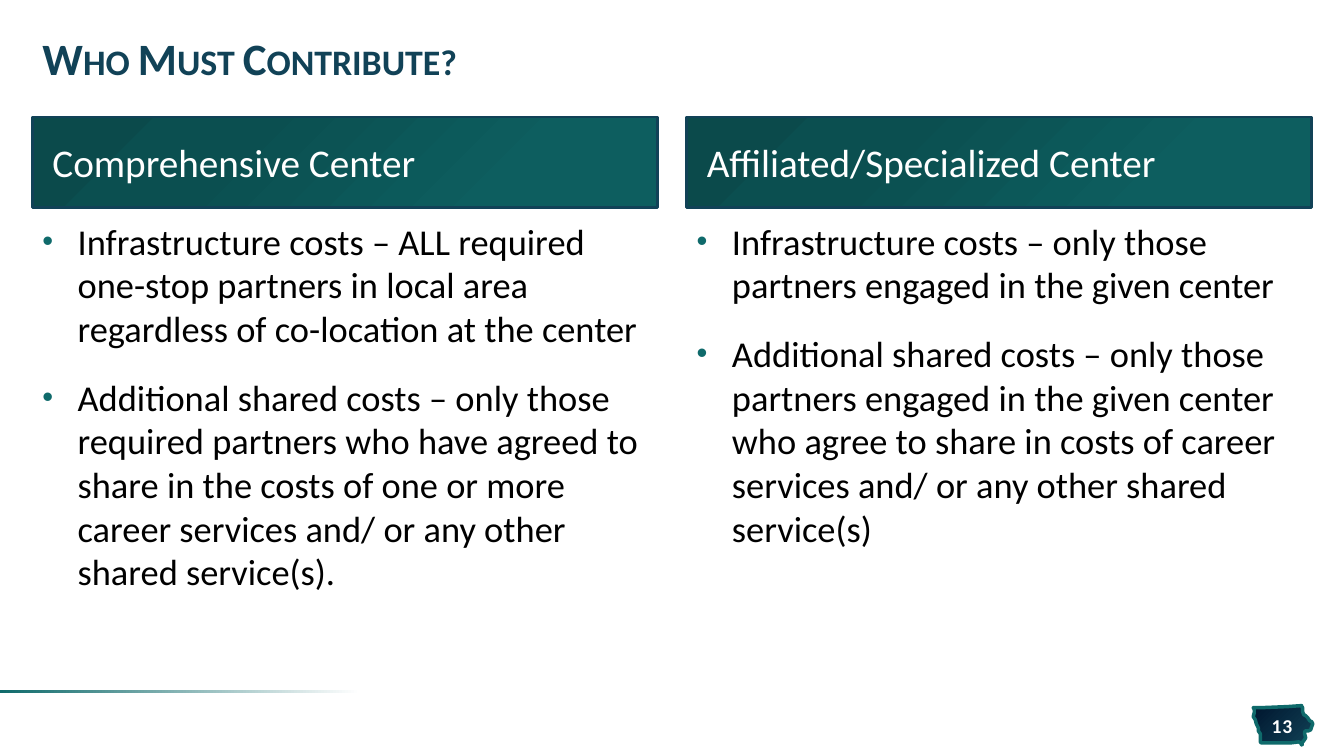
from dataclasses import dataclass

from lxml import etree
from pptx import Presentation
from pptx.dml.color import RGBColor
from pptx.enum.shapes import MSO_SHAPE as Shape
from pptx.enum.text import MSO_ANCHOR as Anchor, MSO_AUTO_SIZE as AutoSize, PP_ALIGN as Align
from pptx.oxml import parse_xml
from pptx.oxml.ns import nsdecls, qn
from pptx.util import Inches, Pt


@dataclass(frozen=True)
class Theme:
    font: str = "Calibri"
    navy: str = "114257"
    teal: str = "0F6A6B"
    white: str = "FFFFFF"
    black: str = "000000"
    badge_stops: tuple = ((0, "00162E"), (100, "114257"))
    rule_stops: tuple = ((6, "FFFFFF"), (100, "0F6A6B"))
    header_stops: tuple = ((0, "0D5E5F"), (23, "0D5E5F"), (69, "0B4F50"), (97, "0B4A4B"))
    title_size: int = 32
    header_size: int = 28
    body_size: int = 26
    number_size: int = 14


LINEAR = '<a:lin ang="{}" scaled="0"/>'
FROM_BOTTOM_RIGHT = '<a:path path="circle"><a:fillToRect l="100000" t="100000"/></a:path>'

MARGIN, COLUMN_STEP, COLUMN_WIDTH = 0.32, 6.49, 6.2

COLUMNS = [
    ("Comprehensive Center", [
        "Infrastructure costs – ALL required one-stop partners in local area "
        "regardless of co-location at the center",
        "Additional shared costs – only those required partners who have agreed to "
        "share in the costs of one or more career services and/ or any other "
        "shared service(s).",
    ]),
    ("Affiliated/Specialized Center", [
        "Infrastructure costs – only those partners engaged in the given center",
        "Additional shared costs – only those partners engaged in the given center "
        "who agree to share in costs of career services and/ or any other shared "
        "service(s)",
    ]),
]

# State outline, in hundredths of an inch
STATE_OUTLINE = [
    (1291, 700), (1277, 701), (1253, 702), (1243, 702), (1244, 704), (1244, 707),
    (1243, 711), (1245, 714), (1246, 718), (1248, 722), (1248, 725), (1250, 728),
    (1250, 732), (1250, 736), (1251, 737), (1280, 737), (1288, 736), (1290, 737),
    (1291, 739), (1292, 738), (1291, 737), (1293, 735), (1295, 732), (1294, 728),
    (1294, 726), (1295, 725), (1298, 725), (1300, 724), (1301, 721), (1302, 718),
    (1301, 716), (1299, 715), (1297, 712), (1295, 710), (1293, 709), (1292, 706),
    (1292, 702), (1291, 701),
]


class SlideBuilder:
    def __init__(self, prs, theme):
        self.theme = theme
        self.s = prs.slides.add_slide(prs.slide_layouts.get_by_name("Comparison"))

    def place(self, sp, left, top, width, height):
        sp.left, sp.top = Inches(left), Inches(top)
        sp.width, sp.height = Inches(width), Inches(height)

    def gradient(self, sp, stops, direction):
        sp.fill.background()
        gs = "".join(f'<a:gs pos="{pos * 1000}"><a:srgbClr val="{color}"/></a:gs>'
                     for pos, color in stops)
        sp_pr = sp._element.spPr
        sp_pr.replace(sp_pr.find(qn("a:noFill")), parse_xml(
            f'<a:gradFill {nsdecls("a")} rotWithShape="1"><a:gsLst>{gs}</a:gsLst>'
            f'{direction}</a:gradFill>'))

    def outline(self, sp, color, width):
        sp.line.color.rgb = RGBColor.from_string(color)
        sp.line.width = Pt(width)

    def frame(self, sp, anchor, insets=(0.1, 0.05, 0.1, 0.05)):
        tf = sp.text_frame
        tf.word_wrap = True
        tf.auto_size = AutoSize.NONE
        tf.vertical_anchor = anchor
        (tf.margin_left, tf.margin_top,
         tf.margin_right, tf.margin_bottom) = map(Inches, insets)
        return tf

    def run(self, p, text, size, color, bold=False):
        r = p.add_run()
        r.text = text
        r.font.name = self.theme.font
        r.font.size = Pt(size)
        r.font.bold = bold
        r.font.color.rgb = RGBColor.from_string(color)
        return r

    def bullet(self, p):
        p_pr = p._p.get_or_add_pPr()
        p_pr.set("marL", str(Inches(0.35)))
        p_pr.set("indent", str(Inches(-0.35)))
        color = etree.SubElement(p_pr, qn("a:buClr"))
        etree.SubElement(color, qn("a:srgbClr"), val=self.theme.teal)
        etree.SubElement(p_pr, qn("a:buSzPct"), val="85000")
        etree.SubElement(p_pr, qn("a:buFont"), typeface="Arial")
        etree.SubElement(p_pr, qn("a:buChar"), char="•")

    def title(self, text):
        sp = self.s.shapes.title
        self.place(sp, MARGIN, 0.24, 12.69, 0.75)
        p = self.frame(sp, Anchor.MIDDLE).paragraphs[0]
        p.alignment = Align.LEFT
        p.line_spacing = 0.85
        r = self.run(p, text, self.theme.title_size, self.theme.navy, bold=True)
        r._r.get_or_add_rPr().set("cap", "small")

    def header(self, sp, left, text):
        self.place(sp, left, 1.16, COLUMN_WIDTH, 0.9)
        self.gradient(sp, self.theme.header_stops, FROM_BOTTOM_RIGHT)
        self.outline(sp, self.theme.navy, 2)
        p = self.frame(sp, Anchor.MIDDLE, (0.2, 0, 0.2, 0)).paragraphs[0]
        p.space_before = Pt(0)
        self.run(p, text, self.theme.header_size, self.theme.white)

    def bullets(self, sp, left, items):
        self.place(sp, left, 2.12, COLUMN_WIDTH, 4.65)
        tf = self.frame(sp, Anchor.TOP)
        for i, item in enumerate(items):
            p = tf.add_paragraph() if i else tf.paragraphs[0]
            self.bullet(p)
            p.space_before = Pt(18 if i else 0)
            self.run(p, item, self.theme.body_size, self.theme.black)

    def column(self, index, heading, items):
        left = MARGIN + index * COLUMN_STEP
        header, body = list(self.s.placeholders)[1 + 2 * index:3 + 2 * index]
        self.header(header, left, heading)
        self.bullets(body, left, items)

    def footer_rule(self):
        sp = self.s.shapes.add_shape(
            Shape.RECTANGLE, 0, Inches(6.85), Inches(3.8), Inches(0.03))
        sp.shadow.inherit = False
        sp.line.fill.background()
        self.gradient(sp, self.theme.rule_stops, LINEAR.format(180 * 60000))

    def state_badge(self):
        start, *rest = STATE_OUTLINE
        builder = self.s.shapes.build_freeform(*start, scale=Inches(0.01))
        builder.add_line_segments(rest, close=True)
        sp = builder.convert_to_shape()
        sp.shadow.inherit = False
        self.gradient(sp, self.theme.badge_stops, LINEAR.format(45 * 60000))
        self.outline(sp, self.theme.teal, 2.5)

    def slide_number(self, number):
        sp = self.s.shapes.add_textbox(
            Inches(12.46), Inches(7.08), Inches(0.51), Inches(0.23))
        p = self.frame(sp, Anchor.MIDDLE, (0, 0.05, 0, 0.05)).paragraphs[0]
        p.alignment = Align.CENTER
        r = self.run(p, number, self.theme.number_size, self.theme.white, bold=True)
        r._r.get_or_add_rPr().set("spc", "50")


def main():
    prs = Presentation()
    prs.slide_width, prs.slide_height = Inches(13.33), Inches(7.5)
    slide = SlideBuilder(prs, Theme())
    slide.title("Who Must Contribute?")
    for index, (heading, items) in enumerate(COLUMNS):
        slide.column(index, heading, items)
    slide.footer_rule()
    slide.state_badge()
    slide.slide_number("13")
    prs.save("out.pptx")


if __name__ == "__main__":
    main()
